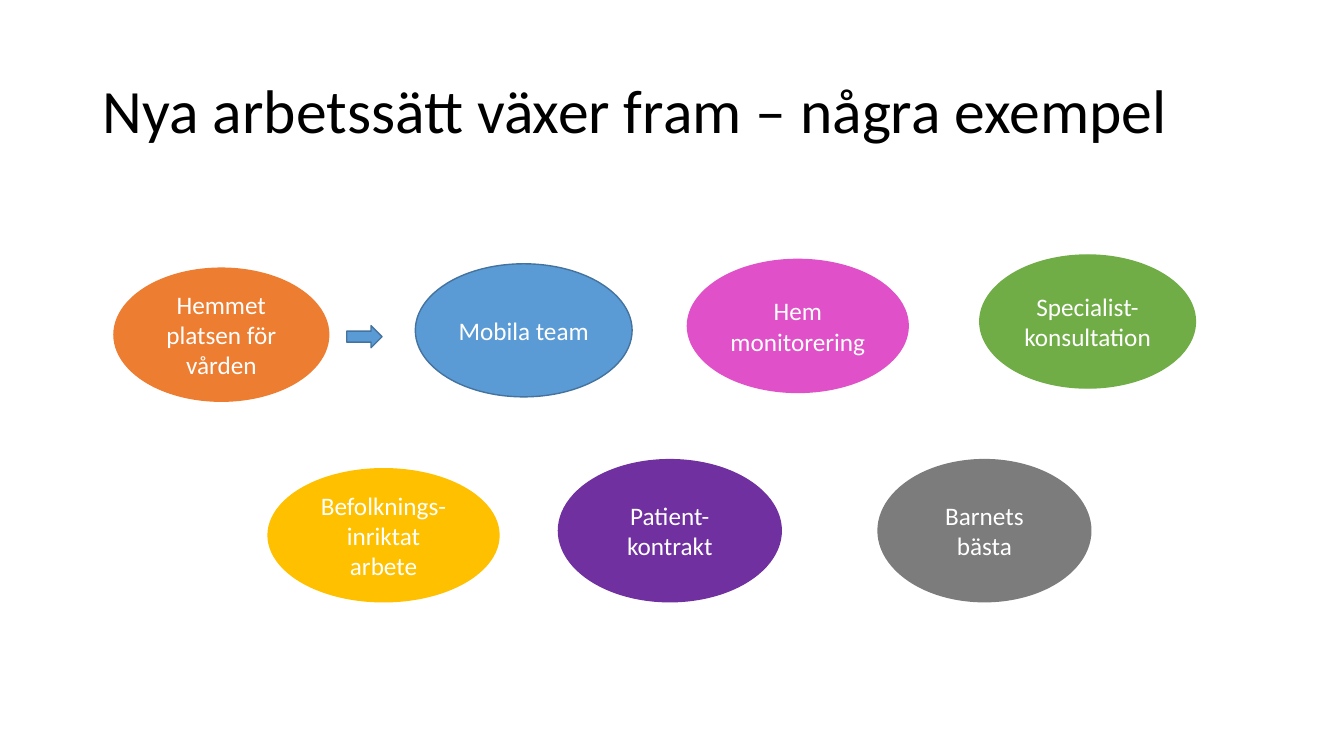
"""Build a slide with seven examples of new ways of working in care."""
from pptx import Presentation
from pptx.dml.color import RGBColor
from pptx.enum.shapes import MSO_SHAPE
from pptx.enum.text import MSO_ANCHOR, PP_ALIGN
from pptx.util import Inches, Pt

WIDTH, HEIGHT = Inches(13.333), Inches(7.5)
BLUE, BLUE_EDGE = "5B9BD5", "43739E"
TOP_ROW_START, TOP_ROW_RISE, OVAL_HEIGHT = 35.47, 0.58, 17.6

TOP_ROW = [
    (8.48, 15.98, "ED7D31", "ED7D31", ["Hemmet platsen för vården"]),
    (30.9, 16.13, BLUE, BLUE_EDGE, ["Mobila team"]),
    (51.15, 16.43, "E050C8", "E050C8", ["Hem", "monitorering"]),
    (72.9, 16.05, "70AD47", "70AD47", ["Specialist-", "konsultation"]),
]
BOTTOM_ROW = [
    (19.95, 62, 17.18, OVAL_HEIGHT, "FFC000", "Befolknings-inriktat arbete"),
    (41.55, 60.8, 16.58, 18.8, "7030A0", "Patient-kontrakt"),
    (65.33, 60.8, 15.83, 18.8, "7C7C7C", "Barnets bästa"),
]


def color(value):
    """Turn a hex string into a colour."""
    return RGBColor.from_string(value)


def box(left, top, width, height):
    """Turn percentages of the slide into lengths."""
    return (int(WIDTH * left / 100), int(HEIGHT * top / 100),
            int(WIDTH * width / 100), int(HEIGHT * height / 100))


def write(sp, lines, size, ink, align, spacing=None):
    """Fill a shape with one paragraph per line."""
    tf = sp.text_frame
    tf.word_wrap = True
    tf.vertical_anchor = MSO_ANCHOR.MIDDLE
    for i, line in enumerate(lines):
        p = tf.add_paragraph() if i else tf.paragraphs[0]
        p.alignment = align
        p.line_spacing = spacing
        r = p.add_run()
        r.text = line
        r.font.name = "Calibri"
        r.font.size = Pt(size)
        r.font.color.rgb = color(ink)


def add_title(s, text):
    """Add the slide heading."""
    sp = s.shapes.add_textbox(*box(6.9, 5.33, 86.25, 19.33))
    write(sp, [text], 44, "000000", PP_ALIGN.LEFT, 0.9)


def add_filled(s, kind, area, fill, edge):
    """Add a preset shape with a fill and a thin outline."""
    sp = s.shapes.add_shape(kind, *box(*area))
    sp.shadow.inherit = False
    sp.fill.solid()
    sp.fill.fore_color.rgb = color(fill)
    sp.line.color.rgb = color(edge)
    sp.line.width = Pt(1)
    return sp


def add_oval(s, area, fill, edge, lines):
    """Add a labelled oval."""
    sp = add_filled(s, MSO_SHAPE.OVAL, area, fill, edge)
    write(sp, lines, 18, "FFFFFF", PP_ALIGN.CENTER)


def main():
    """Build and save the slide."""
    prs = Presentation()
    prs.slide_width, prs.slide_height = WIDTH, HEIGHT
    s = prs.slides.add_slide(prs.slide_layouts[6])
    add_title(s, "Nya arbetssätt växer fram – några exempel")
    for i, (left, width, fill, edge, lines) in enumerate(TOP_ROW):
        top = TOP_ROW_START - i * TOP_ROW_RISE
        add_oval(s, (left, top, width, OVAL_HEIGHT), fill, edge, lines)
    for *area, fill, label in BOTTOM_ROW:
        add_oval(s, area, fill, fill, [label])
    add_filled(s, MSO_SHAPE.RIGHT_ARROW, (25.8, 43.07, 2.63, 2.93), BLUE, BLUE_EDGE)
    prs.save("out.pptx")


if __name__ == "__main__":
    main()
